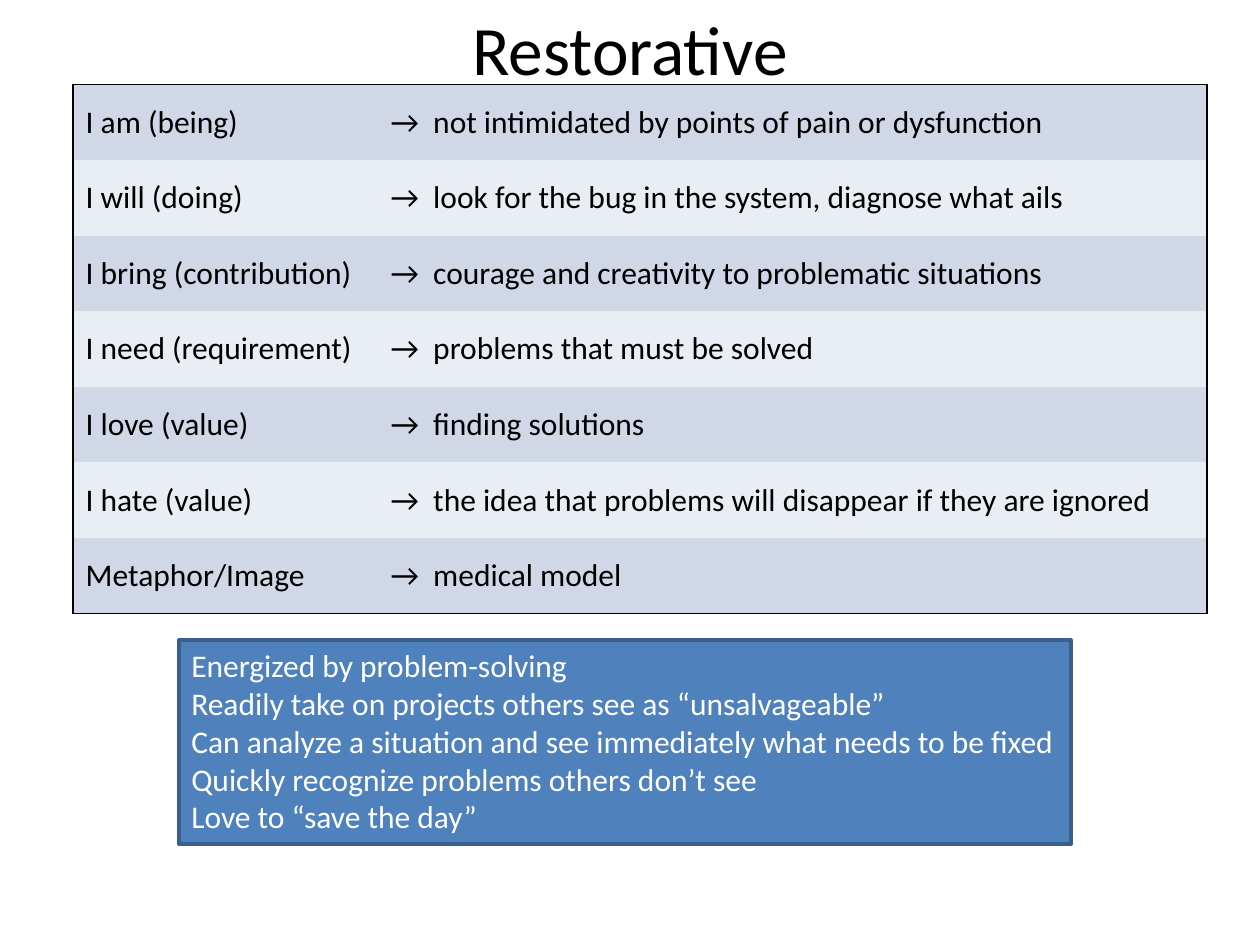
from lxml import etree
from pptx import Presentation
from pptx.dml.color import RGBColor
from pptx.enum.shapes import MSO_SHAPE
from pptx.enum.text import MSO_ANCHOR, MSO_AUTO_SIZE, PP_ALIGN
from pptx.oxml.ns import qn
from pptx.util import Inches, Pt

LEFT, CENTER = PP_ALIGN.LEFT, PP_ALIGN.CENTER
MIDDLE = MSO_ANCHOR.MIDDLE
NO_AUTOFIT, GROW = MSO_AUTO_SIZE.NONE, MSO_AUTO_SIZE.SHAPE_TO_FIT_TEXT
RECTANGLE = MSO_SHAPE.RECTANGLE
TITLE_ONLY = 5

FONT = "Calibri"
BLACK, WHITE = "000000", "FFFFFF"
BAND_FILLS = ("D0D8E8", "E9EDF4")
BOX_FILL, BOX_LINE = "4F81BD", "3A5F8C"

ROWS = [
    ("I am (being)", "not intimidated by points of pain or dysfunction"),
    ("I will (doing)", "look for the bug in the system, diagnose what ails"),
    ("I bring (contribution)", "courage and creativity to problematic situations"),
    ("I need (requirement)", "problems that must be solved"),
    ("I love (value)", "finding solutions"),
    ("I hate (value)", "the idea that problems will disappear if they are ignored"),
    ("Metaphor/Image", "medical model"),
]
TRAITS = [
    "Energized by problem-solving",
    "Readily take on projects others see as “unsalvageable”",
    "Can analyze a situation and see immediately what needs to be fixed",
    "Quickly recognize problems others don’t see",
    "Love to “save the day”",
]


def rgb(color):
    return RGBColor.from_string(color)


def write(tf, *lines, size=18, color=BLACK, align=LEFT):
    """Put each line in its own paragraph."""
    for i, line in enumerate(lines):
        p = tf.paragraphs[0] if i == 0 else tf.add_paragraph()
        p.alignment = align
        r = p.add_run()
        r.text = line
        r.font.name = FONT
        r.font.size = Pt(size)
        r.font.color.rgb = rgb(color)


def set_borders(cell, outer):
    """Draw a black line on the sides named in outer and none on the others."""
    props = cell._tc.get_or_add_tcPr()
    for side in "LRTB":
        ln = etree.SubElement(props, qn(f"a:ln{side}"), w=str(Pt(1)))
        if side in outer:
            fill = etree.SubElement(ln, qn("a:solidFill"))
            etree.SubElement(fill, qn("a:srgbClr"), val=BLACK)
        else:
            etree.SubElement(ln, qn("a:noFill"))


def add_title(slide, text, left, top, width, height):
    title = slide.shapes.title
    title.left, title.top, title.width, title.height = left, top, width, height
    tf = title.text_frame
    tf.auto_size = NO_AUTOFIT
    tf.vertical_anchor = MIDDLE
    write(tf, text, size=39.6, align=CENTER)


def add_statements(slide, left, top, width, height):
    frame = slide.shapes.add_table(len(ROWS), 2, left, top, width, height)
    table = frame.table
    table.first_row = table.horz_banding = False
    label_width = Inches(2.42)
    table.columns[0].width = label_width
    table.columns[1].width = width - label_width
    last = len(ROWS) - 1
    for i, (label, statement) in enumerate(ROWS):
        ends = ("T" if i == 0 else "") + ("B" if i == last else "")
        texts = (label, f"→  {statement}")
        for j, (text, side) in enumerate(zip(texts, "LR")):
            cell = table.cell(i, j)
            set_borders(cell, side + ends)
            cell.fill.solid()
            cell.fill.fore_color.rgb = rgb(BAND_FILLS[i % 2])
            cell.vertical_anchor = MIDDLE
            write(cell.text_frame, text)


def add_traits(slide, left, top, width, height):
    sp = slide.shapes.add_shape(RECTANGLE, left, top, width, height)
    sp.shadow.inherit = False
    sp.fill.solid()
    sp.fill.fore_color.rgb = rgb(BOX_FILL)
    sp.line.color.rgb = rgb(BOX_LINE)
    sp.line.width = Pt(2)
    tf = sp.text_frame
    tf.word_wrap = True
    tf.auto_size = GROW
    tf.vertical_anchor = MSO_ANCHOR.TOP
    write(tf, *TRAITS, color=WHITE)


def main():
    prs = Presentation()
    prs.slide_width, prs.slide_height = Inches(10), Inches(7.5)
    slide = prs.slides.add_slide(prs.slide_layouts[TITLE_ONLY])
    add_title(slide, "Restorative", Inches(0.5), Inches(0.17), Inches(9), Inches(0.42))
    add_statements(slide, Inches(0.58), Inches(0.67), Inches(9), Inches(4.2))
    add_traits(slide, Inches(1.42), Inches(5.08), Inches(7.08), Inches(1.62))
    prs.save("out.pptx")


if __name__ == "__main__":
    main()
